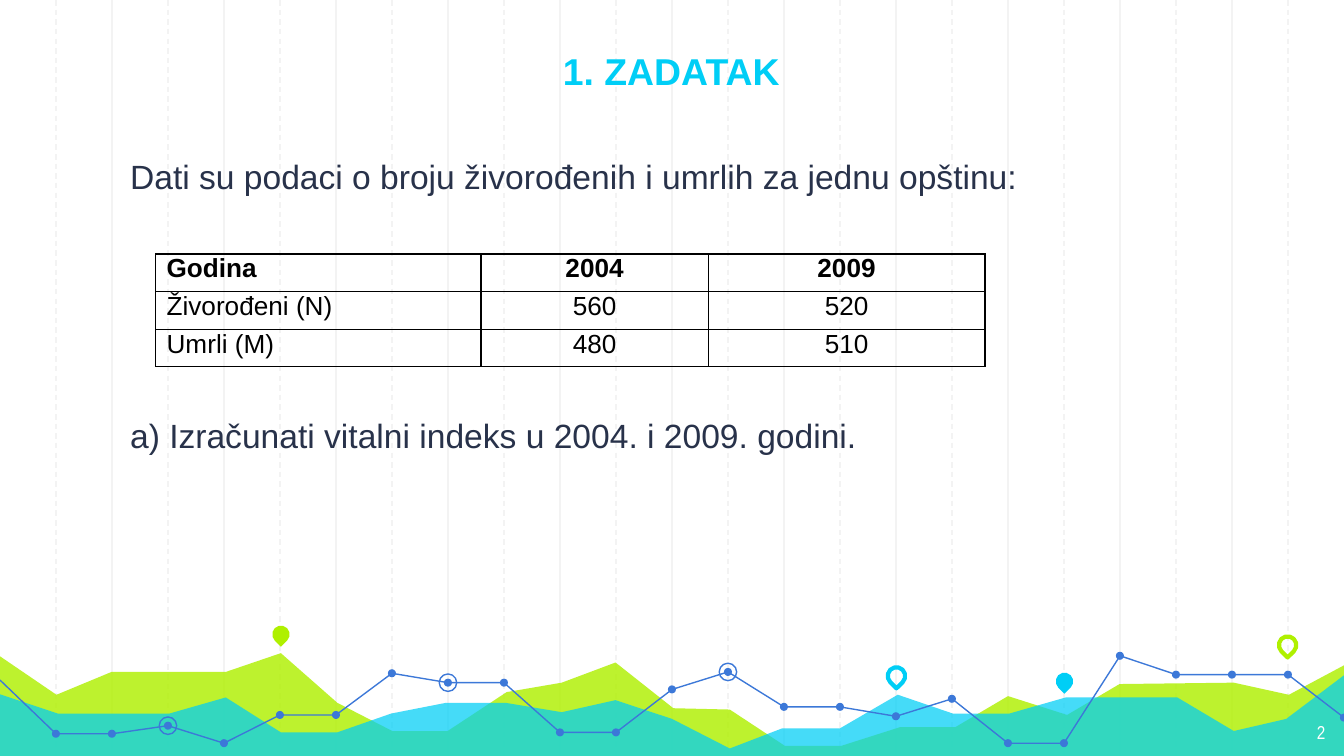
from lxml import etree
from pptx import Presentation
from pptx.dml.color import RGBColor
from pptx.enum.dml import MSO_LINE
from pptx.enum.shapes import MSO_CONNECTOR, MSO_SHAPE
from pptx.enum.text import MSO_ANCHOR, PP_ALIGN
from pptx.oxml.ns import qn
from pptx.util import Inches, Pt

STRAIGHT = MSO_CONNECTOR.STRAIGHT
ELLIPSE, TEARDROP = MSO_SHAPE.OVAL, MSO_SHAPE.TEAR
DASH = MSO_LINE.DASH
LEFT, CENTER, RIGHT = PP_ALIGN.LEFT, PP_ALIGN.CENTER, PP_ALIGN.RIGHT
TOP, BOTTOM = MSO_ANCHOR.TOP, MSO_ANCHOR.BOTTOM

COLORS = {"grid": "F3F3F3", "lime": "AFF000", "cyan": "00CEF6", "blue": "3C78D8",
          "navy": "28324A", "black": "000000", "white": "FFFFFF"}
STEP = 10 / 24  # distance between grid lines


def rgb(name):
    return RGBColor.from_string(COLORS[name])


class SlideBuilder:
    font = "Arial"

    def __init__(self, slide):
        self.shapes = slide.shapes

    def paint(self, shape, fill=None, line=None, width=0.75):
        shape.shadow.inherit = False
        if fill:
            shape.fill.solid()
            shape.fill.fore_color.rgb = rgb(fill)
        else:
            shape.fill.background()
        if line:
            shape.line.color.rgb = rgb(line)
            shape.line.width = Pt(width)
        else:
            shape.line.fill.background()

    def grid_line(self, x, dash=None):
        line = self.shapes.add_connector(STRAIGHT, Inches(x), 0, Inches(x), Inches(5.65))
        line.line.color.rgb = rgb("grid")
        line.line.width = Pt(0.75)
        if dash:
            line.line.dash_style = dash
        etree.SubElement(line._element.spPr, qn("a:effectLst"))

    def outline(self, points, close, **style):
        start, *others = [(Inches(x), Inches(y)) for x, y in points]
        builder = self.shapes.build_freeform(*start)
        builder.add_line_segments(others, close=close)
        shape = builder.convert_to_shape()
        self.paint(shape, **style)
        return shape

    def area(self, points, color, opacity):
        shape = self.outline(points, True, fill=color)
        color_element = shape._element.spPr.find(f"{qn('a:solidFill')}/{qn('a:srgbClr')}")
        etree.SubElement(color_element, qn("a:alpha"), val=str(opacity * 1000))

    def marker(self, kind, center, size, rotation=0, **style):
        x, y = center
        shape = self.shapes.add_shape(kind, Inches(x - size / 2), Inches(y - size / 2),
                                      Inches(size), Inches(size))
        shape.rotation = rotation
        self.paint(shape, **style)

    def style_text(self, paragraph, size, color, align=LEFT, bold=False, font=None):
        paragraph.alignment = align
        for run in paragraph.runs:
            run.font.name = font or self.font
            run.font.size = Pt(size)
            run.font.bold = bold
            run.font.color.rgb = rgb(color)

    def text(self, box, lines, size, color, anchor=TOP, gap=0, indent=0, **style):
        frame = self.shapes.add_textbox(*map(Inches, box)).text_frame
        frame.word_wrap = True
        frame.vertical_anchor = anchor
        frame.margin_left = frame.margin_right = Inches(0.1)
        frame.margin_top = frame.margin_bottom = Inches(0.1)
        frame.text = "\n".join(lines)
        for index, paragraph in enumerate(frame.paragraphs):
            paragraph._p.get_or_add_pPr().set("marL", str(Inches(indent)))
            if index:
                paragraph.space_before = Pt(gap)
            self.style_text(paragraph, size, color, **style)

    def cell_borders(self, cell):
        properties = cell._tc.get_or_add_tcPr()
        for position, side in enumerate(("lnL", "lnR", "lnT", "lnB")):
            border = etree.Element(qn(f"a:{side}"), w=str(Pt(0.75)))
            fill = etree.SubElement(border, qn("a:solidFill"))
            etree.SubElement(fill, qn("a:srgbClr"), val=COLORS["black"])
            properties.insert(position, border)

    def table(self, left, top, widths, row_height, rows):
        table = self.shapes.add_table(len(rows), len(widths), Inches(left), Inches(top),
                                      Inches(sum(widths)),
                                      Inches(row_height * len(rows))).table
        table.first_row = table.horz_banding = False
        for column, width in zip(table.columns, widths):
            column.width = Inches(width)
        for r, row in enumerate(rows):
            table.rows[r].height = Inches(row_height)
            for c, value in enumerate(row):
                cell = table.cell(r, c)
                cell.fill.background()
                cell.margin_left = cell.margin_right = Inches(0.08)
                cell.margin_top = cell.margin_bottom = 0
                cell.text = value
                self.style_text(cell.text_frame.paragraphs[0], 14, "black",
                                CENTER if c else LEFT, bold=r == 0)
                self.cell_borders(cell)


LIME_AREA = [(-0.02, 4.87), (0.42, 5.17), (0.83, 5), (1.68, 5), (2.09, 4.86), (2.51, 5.23),
             (2.92, 5.44), (3.33, 5.44), (3.77, 5.15), (4.18, 5.08), (4.58, 4.93),
             (5.01, 5.27), (5.43, 5.28), (5.84, 5.55), (6.26, 5.55), (6.7, 5.41),
             (7.11, 5.41), (7.5, 5.18), (7.94, 5.32), (8.33, 5.09), (9.18, 5.08),
             (9.59, 5.17), (10.02, 4.94), (10.01, 5.64), (-0.03, 5.64)]
CYAN_AREA = [(-0.02, 5.16), (0.43, 5.31), (1.26, 5.31), (1.68, 5.19), (2.09, 5.45),
             (2.51, 5.45), (2.91, 5.31), (3.32, 5.23), (3.76, 5.23), (4.18, 5.3),
             (4.58, 5.21), (5, 5.35), (5.43, 5.57), (5.82, 5.42), (6.25, 5.42),
             (6.68, 5.17), (7.09, 5.31), (7.51, 5.31), (7.93, 5.19), (8.76, 5.19),
             (9.18, 5.44), (9.57, 5.35), (10.02, 5.01), (10.02, 5.65), (-0.03, 5.65)]
TREND_HEIGHTS = [5.06, 5.46, 5.46, 5.4, 5.53, 5.32, 5.32, 5.01, 5.08, 5.08, 5.45, 5.45, 5.13,
                 5, 5.26, 5.26, 5.33, 5.2, 5.53, 5.53, 4.88, 5.02, 5.02, 5.02, 5.34]
TREND = [(i * STEP, y) for i, y in enumerate(TREND_HEIGHTS)]
PINS = [((2.09, 4.72), {"fill": "lime"}),
        ((6.67, 5.03), {"line": "cyan", "width": 2.25}),
        ((7.92, 5.07), {"fill": "cyan"}),
        ((9.58, 4.8), {"line": "lime", "width": 2.25})]
BIRTHS_AND_DEATHS = [("Godina", "2004", "2009"),
                     ("Živorođeni (N)", "560", "520"),
                     ("Umrli (M)", "480", "510")]


def main():
    # Widescreen 16:9 slide
    deck = Presentation()
    deck.slide_width = Inches(10)
    deck.slide_height = deck.slide_width * 9 // 16
    slide = deck.slides.add_slide(deck.slide_layouts[6])
    builder = SlideBuilder(slide)

    # Background grid: solid lines, then dashed lines between them
    for first, dash in ((2, None), (1, DASH)):
        for i in range(first, 24, 2):
            builder.grid_line(i * STEP, dash)

    # Areas, pins and trend line along the bottom
    builder.area(LIME_AREA, "lime", 82)
    builder.area(CYAN_AREA, "cyan", 73)
    for center, style in PINS:
        builder.marker(TEARDROP, center, 0.13, rotation=135, **style)
    for start, end in ((0, 11), (11, 20), (20, 24)):
        builder.outline(TREND[start:end + 1], False, line="blue")
    for point in TREND[1:]:
        builder.marker(ELLIPSE, point, 0.06, fill="blue")
    for i in (3, 8, 13):
        builder.marker(ELLIPSE, TREND[i], 0.13, line="blue")

    # Title, task text and page number
    builder.text((1.17, 0, 7.65, 0.79), ["1. ZADATAK"], 20, "cyan",
                 anchor=BOTTOM, align=CENTER, bold=True)
    builder.text((0.74, 1.06, 8.5, 3.33),
                 ["Dati su podaci o broju živorođenih i umrlih za jednu opštinu:",
                  "a) Izračunati vitalni indeks u 2004. i 2009. godini."],
                 18, "navy", gap=117, indent=0.13)
    builder.text((9.36, 5.28, 0.6, 0.35), ["2"], 10, "white",
                 align=RIGHT, font="Arial Narrow")

    # Births and deaths by year
    builder.table(1.16, 1.89, (2.42, 1.69, 2.06), 0.28, BIRTHS_AND_DEATHS)

    deck.save("out.pptx")


if __name__ == "__main__":
    main()
